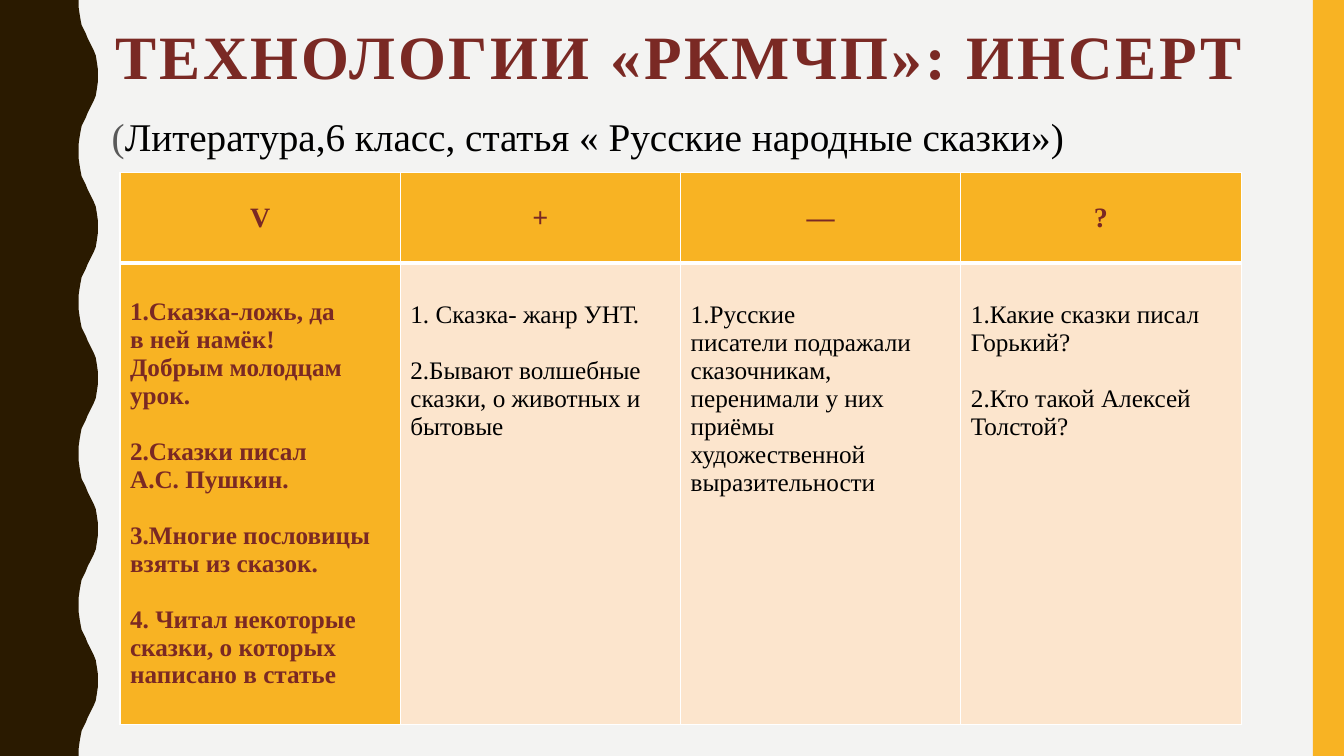
"""Builds the slide on the INSERT reading technique with its table of notes."""
from lxml.etree import SubElement as Sub
from pptx import Presentation
from pptx.dml.color import RGBColor as RGB
from pptx.enum.shapes import MSO_SHAPE as SHAPE
from pptx.enum.text import MSO_ANCHOR as ANCHOR, PP_ALIGN as ALIGN
from pptx.oxml.ns import qn
from pptx.util import Pt

PX = 9144
FONT = "Times New Roman"
PAPER = RGB(0xF3, 0xF3, 0xF2)
DARK = RGB(0x2A, 0x1A, 0x00)
GOLD = RGB(0xF8, 0xB3, 0x23)
PEACH = RGB(0xFC, 0xE5, 0xCD)
RED = RGB(0x7A, 0x29, 0x24)
GREY = RGB(0x59, 0x59, 0x59)
BLACK = RGB(0, 0, 0)

WAVE = [(78, 0), (78, 7), (79, 14), (80, 20), (81, 25), (83, 29), (85, 33),
        (87, 38), (89, 42), (91, 46), (93, 50), (95, 55), (96, 61), (97, 68), (97, 75)]
PERIOD = 150
HEADS = ["V", "+", "—", "?"]
# Each note is its text, a gap flag and an automatic number.
NOTES = [
    [("1.Сказка-ложь, да", 0, 0), ("в ней намёк!", 0, 0), ("Добрым молодцам", 0, 0),
     ("урок.", 0, 0), ("Сказки писал", 1, 2), ("А.С. Пушкин.", 0, 0),
     ("3.Многие пословицы взяты из сказок.", 1, 0),
     ("4. Читал некоторые сказки, о которых написано в статье", 1, 0)],
    [("1. Сказка- жанр УНТ.", 0, 0), ("2.Бывают волшебные", 1, 0),
     ("сказки, о животных и", 0, 0), ("бытовые", 0, 0)],
    [("Русские", 0, 1), ("писатели подражали", 0, 0),
     ("сказочникам, перенимали у них приёмы художественной выразительности", 0, 0)],
    [("1.Какие сказки писал Горький?", 0, 0), ("2.Кто такой Алексей Толстой?", 1, 0)],
]


def box(*sides):
    """Turn px lengths into EMU."""
    return [side * PX for side in sides]


def add_run(para, text, size, color, bold=False):
    """Add one styled run and return it."""
    run = para.add_run()
    run.text = text
    font = run.font
    font.name, font.size, font.bold = FONT, Pt(size), bold
    font.color.rgb = color
    return run


def paint(shape, color):
    """Give a shape a plain fill with no line or shadow."""
    shape.shadow.inherit = False
    shape.fill.solid()
    shape.fill.fore_color.rgb = color
    shape.line.fill.background()


def add_wave(slide):
    """Draw the dark wavy edge on the left."""
    cycle = WAVE + [(x, PERIOD - y) for x, y in WAVE[-2::-1]]
    edge = [(x, y + n * PERIOD) for n in range(5) for x, y in cycle]
    pen = slide.shapes.build_freeform(0, 0, scale=PX)
    pen.add_line_segments(edge + [(0, 750)], close=True)
    paint(pen.convert_to_shape(), DARK)


def add_title(slide, text):
    """Fill and place the title."""
    title = slide.shapes.title
    title.left, title.top, title.width, title.height = box(105, 17, 1176, 84)
    frame = title.text_frame
    frame.word_wrap, frame.vertical_anchor = True, ANCHOR.MIDDLE
    para = frame.paragraphs[0]
    para.alignment, para.line_spacing = ALIGN.LEFT, 0.9
    run = add_run(para, text, 44, RED, True)
    run.font._element.set("spc", "200")


def add_lead(slide, parts):
    """Add the line under the title from coloured parts."""
    frame = slide.shapes.add_textbox(*box(101, 106, 1132, 57)).text_frame
    frame.word_wrap, frame.vertical_anchor = True, ANCHOR.MIDDLE
    for text, color in parts:
        add_run(frame.paragraphs[0], text, 28, color)


def set_cell(cell, fill, anchor, top, lines):
    """Style a cell with its fill, margins and white borders."""
    props = cell._tc.get_or_add_tcPr()
    for side, width in zip("LRTB", lines):
        line = Sub(props, qn(f"a:ln{side}"), w=str(Pt(width)))
        Sub(Sub(line, qn("a:solidFill")), qn("a:srgbClr"), val="FFFFFF")
    cell.fill.solid()
    cell.fill.fore_color.rgb = fill
    cell.vertical_anchor = anchor
    cell.margin_left = cell.margin_right = cell.margin_bottom = 10 * PX
    cell.margin_top = top * PX


def add_notes(cell, notes, color, bold):
    """Write the notes of one cell."""
    frame = cell.text_frame
    for i, (text, gap, num) in enumerate(notes):
        para = frame.add_paragraph() if i else frame.paragraphs[0]
        if num:
            props = para._p.get_or_add_pPr()
            Sub(props, qn("a:buAutoNum"), type="arabicPeriod", startAt=str(num))
        if gap:
            para.space_before = Pt(20)
        add_run(para, text, 18, color, bold)


def add_grid(slide):
    """Add the table of marks and notes."""
    table = slide.shapes.add_table(2, 4, *box(119, 171, 1112, 548)).table
    table.rows[0].height, table.rows[1].height = box(90, 458)
    for col, (head, notes) in enumerate(zip(HEADS, NOTES)):
        table.columns[col].width = 278 * PX
        cell = table.cell(0, col)
        set_cell(cell, GOLD, ANCHOR.MIDDLE, 10, (1, 1, 1, 3))
        para = cell.text_frame.paragraphs[0]
        para.alignment = ALIGN.CENTER
        add_run(para, head, 20, RED, True)
        cell = table.cell(1, col)
        first = col == 0
        look = (GOLD, ANCHOR.MIDDLE, 10) if first else (PEACH, ANCHOR.TOP, 38)
        set_cell(cell, *look, (1, 1, 3, 1))
        add_notes(cell, notes, RED if first else BLACK, first)


def main():
    """Build and save the slide."""
    deck = Presentation()
    deck.slide_width, deck.slide_height = box(1333, 750)
    slide = deck.slides.add_slide(deck.slide_layouts[5])
    slide.background.fill.solid()
    slide.background.fill.fore_color.rgb = PAPER
    add_wave(slide)
    paint(slide.shapes.add_shape(SHAPE.RECTANGLE, *box(1302, 0, 31, 750)), GOLD)
    add_title(slide, "ТЕХНОЛОГИИ «РКМЧП»: ИНСЕРТ")
    add_lead(slide, [("(", GREY),
                     ("Литература,6 класс, статья « Русские народные сказки»)", BLACK)])
    add_grid(slide)
    deck.save("out.pptx")


if __name__ == "__main__":
    main()
